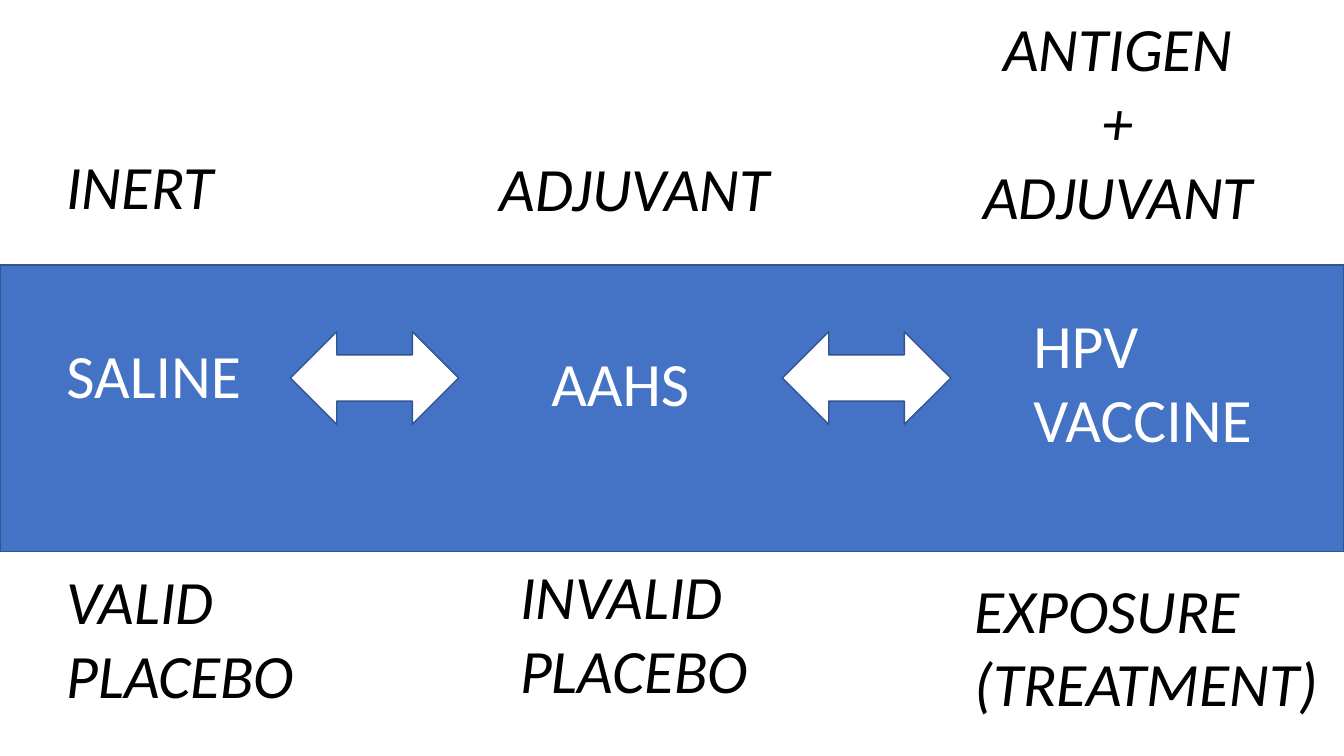
from dataclasses import dataclass

from pptx import Presentation
from pptx.dml.color import RGBColor
from pptx.enum.shapes import MSO_SHAPE
from pptx.enum.text import MSO_AUTO_SIZE, PP_ALIGN
from pptx.slide import Slide
from pptx.util import Inches, Pt

RECTANGLE = MSO_SHAPE.RECTANGLE
DOUBLE_ARROW = MSO_SHAPE.LEFT_RIGHT_ARROW
FIT_SHAPE = MSO_AUTO_SIZE.SHAPE_TO_FIT_TEXT
LEFT, CENTER = PP_ALIGN.LEFT, PP_ALIGN.CENTER
BLANK_LAYOUT = 6


@dataclass(frozen=True)
class Theme:
    font: str = "Calibri"
    size: Pt = Pt(44)
    outline_width: Pt = Pt(1)
    band: RGBColor = RGBColor(0x44, 0x72, 0xC4)
    outline: RGBColor = RGBColor(0x32, 0x54, 0x91)
    light: RGBColor = RGBColor(0xFF, 0xFF, 0xFF)
    dark: RGBColor = RGBColor(0, 0, 0)


@dataclass(frozen=True)
class Block:
    kind: MSO_SHAPE
    left: float
    top: float
    width: float
    height: float
    fill: RGBColor


@dataclass(frozen=True)
class Label:
    lines: tuple[str, ...]
    left: float
    top: float
    width: float
    on_band: bool = False
    align: PP_ALIGN = LEFT

    @property
    def height(self) -> float:
        """Insets plus one line height for each line."""
        return 0.1 + 0.74 * len(self.lines)


THEME = Theme()
SLIDE_WIDTH, SLIDE_HEIGHT = 13.33, 7.5

BLOCKS = [
    Block(RECTANGLE, 0, 2.63, SLIDE_WIDTH, 2.84, THEME.band),
    *(Block(DOUBLE_ARROW, left, 3.29, 1.67, 0.92, THEME.light) for left in (2.88, 7.76)),
]

LABELS = [
    # Substances on the band
    Label(("SALINE",), 0.56, 3.29, 1.95, on_band=True),
    Label(("AAHS",), 5.37, 3.37, 1.59, on_band=True),
    Label(("HPV", "VACCINE"), 10.15, 3, 2.39, on_band=True),
    # Contents above the band
    Label(("INERT",), 0.56, 1.42, 1.69),
    Label(("ADJUVANT",), 4.86, 1.44, 2.9),
    Label(("ANTIGEN", "+", "ADJUVANT"), 9.64, 0.05, 2.9, align=CENTER),
    # Roles below the band
    Label(("VALID", "PLACEBO"), 0.56, 5.54, 2.49),
    Label(("INVALID", "PLACEBO"), 5.06, 5.49, 2.49),
    Label(("EXPOSURE", "(TREATMENT)"), 9.57, 5.62, 3.65),
]


def draw_block(slide: Slide, block: Block) -> None:
    shape = slide.shapes.add_shape(
        block.kind, Inches(block.left), Inches(block.top),
        Inches(block.width), Inches(block.height),
    )
    shape.shadow.inherit = False
    shape.fill.solid()
    shape.fill.fore_color.rgb = block.fill
    shape.line.color.rgb = THEME.outline
    shape.line.width = THEME.outline_width


def draw_label(slide: Slide, label: Label) -> None:
    box = slide.shapes.add_textbox(
        Inches(label.left), Inches(label.top), Inches(label.width), Inches(label.height)
    )
    frame = box.text_frame
    frame.word_wrap = False
    frame.auto_size = FIT_SHAPE
    for index, line in enumerate(label.lines):
        paragraph = frame.add_paragraph() if index else frame.paragraphs[0]
        paragraph.alignment = label.align
        run = paragraph.add_run()
        run.text = line
        run.font.name = THEME.font
        run.font.size = THEME.size
        run.font.italic = not label.on_band
        run.font.color.rgb = THEME.light if label.on_band else THEME.dark


def main() -> None:
    presentation = Presentation()
    presentation.slide_width = Inches(SLIDE_WIDTH)
    presentation.slide_height = Inches(SLIDE_HEIGHT)
    slide = presentation.slides.add_slide(presentation.slide_layouts[BLANK_LAYOUT])

    # Band and arrows
    for block in BLOCKS:
        draw_block(slide, block)

    # Wording
    for label in LABELS:
        draw_label(slide, label)

    presentation.save("out.pptx")


if __name__ == "__main__":
    main()
